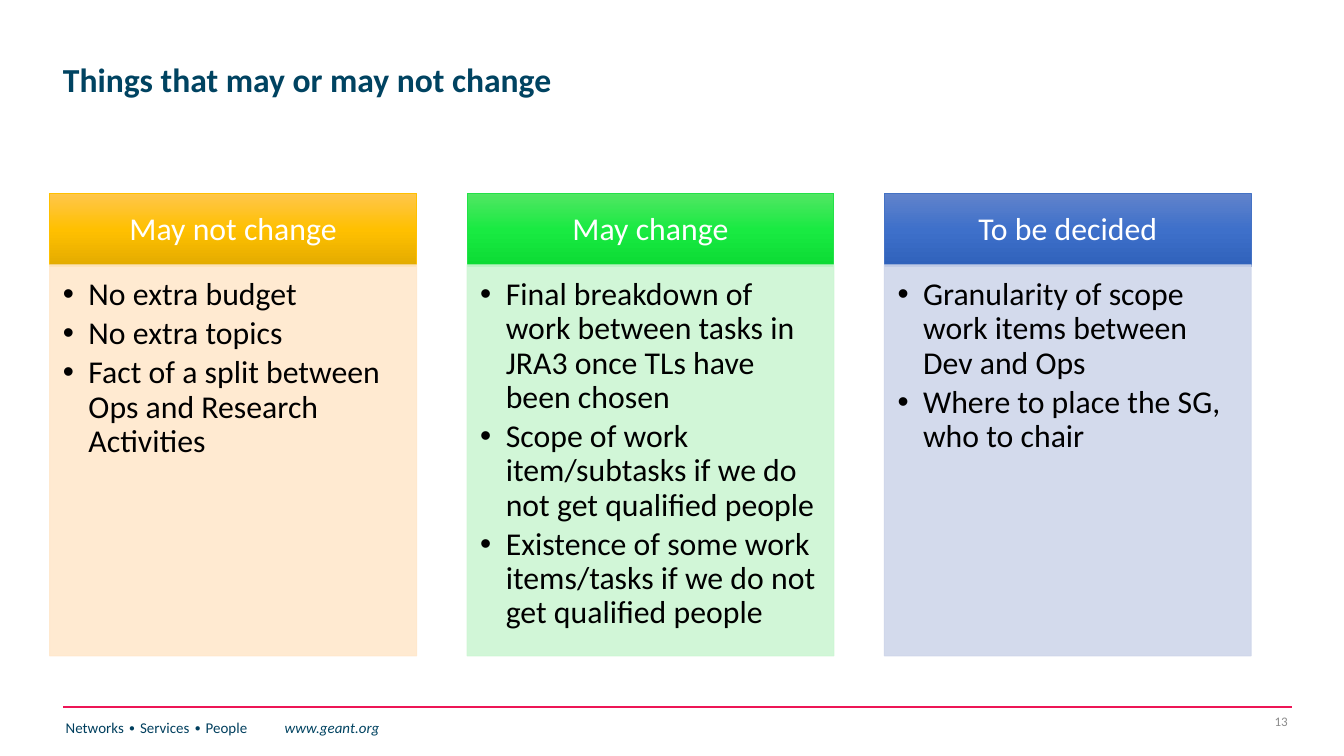
from lxml import etree
from pptx import Presentation
from pptx.dml.color import RGBColor
from pptx.enum.shapes import MSO_CONNECTOR, MSO_SHAPE
from pptx.enum.text import MSO_ANCHOR, PP_ALIGN
from pptx.oxml.ns import qn
from pptx.util import Inches, Pt

RECTANGLE = MSO_SHAPE.RECTANGLE
STRAIGHT = MSO_CONNECTOR.STRAIGHT
TOP, MIDDLE = MSO_ANCHOR.TOP, MSO_ANCHOR.MIDDLE
LEFT, CENTER, RIGHT = PP_ALIGN.LEFT, PP_ALIGN.CENTER, PP_ALIGN.RIGHT

FONT = "Calibri"
WHITE = RGBColor(0xFF, 0xFF, 0xFF)
BLACK = RGBColor(0x00, 0x00, 0x00)
NAVY = RGBColor(0x00, 0x43, 0x61)
FOOTER_NAVY = RGBColor(0x00, 0x3F, 0x5E)
GRAY = RGBColor(0x8C, 0x8C, 0x8C)
CRIMSON = RGBColor(0xED, 0x15, 0x56)
AMBER = RGBColor(0xFF, 0xC0, 0x00)
AMBER_STOPS = (RGBColor(0xFF, 0xC6, 0x4B), AMBER, RGBColor(0xE3, 0xAB, 0x00))
PEACH = RGBColor(0xFF, 0xE8, 0xCC)
GREEN = RGBColor(0x23, 0xE1, 0x48)
GREEN_STOPS = (RGBColor(0x51, 0xE6, 0x63), RGBColor(0x19, 0xEA, 0x42), RGBColor(0x0C, 0xDB, 0x34))
MINT = RGBColor(0xCC, 0xF6, 0xD3)
BLUE = RGBColor(0x44, 0x72, 0xC4)
BLUE_STOPS = (RGBColor(0x61, 0x83, 0xCB), RGBColor(0x3E, 0x70, 0xCA), RGBColor(0x30, 0x62, 0xBB))
LAVENDER = RGBColor(0xCF, 0xD6, 0xEA)

COLUMNS = [
    ("May not change", AMBER, AMBER_STOPS, PEACH, [
        "No extra budget",
        "No extra topics",
        "Fact of a split between Ops and Research Activities",
    ]),
    ("May change", GREEN, GREEN_STOPS, MINT, [
        "Final breakdown of work between tasks in JRA3 once TLs have been chosen",
        "Scope of work item/subtasks if we do not get qualified people",
        "Existence of some work items/tasks if we do not get qualified people",
    ]),
    ("To be decided", BLUE, BLUE_STOPS, LAVENDER, [
        "Granularity of scope work items between Dev and Ops",
        "Where to place the SG, who to chair",
    ]),
]
FIRST_LEFT, LAST_LEFT, COLUMN_WIDTH = 0.37, 6.58, 2.73
COLUMN_STEP = (LAST_LEFT - FIRST_LEFT) / (len(COLUMNS) - 1)
HEADER_TOP, HEADER_HEIGHT = 1.44, 0.54
BODY_TOP, BODY_HEIGHT = 1.97, 2.91


def write(box, lines, size, color, align=LEFT, anchor=TOP, insets=(0.1, 0.05, 0.1, 0.05)):
    """Fill a box with one paragraph per line; insets run left, top, right, bottom."""
    frame = box.text_frame
    frame.word_wrap = True
    frame.vertical_anchor = anchor
    frame.margin_left, frame.margin_top, frame.margin_right, frame.margin_bottom = map(Inches, insets)
    frame.text = "\n".join(lines)
    for para in frame.paragraphs:
        para.alignment = align
        for span in para.runs:
            span.font.name = FONT
            span.font.size = Pt(size)
            span.font.color.rgb = color
    return frame.paragraphs


def add_panel(left, top, height, line_color):
    panel = page.shapes.add_shape(
        RECTANGLE, Inches(left), Inches(top), Inches(COLUMN_WIDTH), Inches(height))
    panel.shadow.inherit = False
    panel.line.color.rgb = line_color
    panel.line.width = Pt(0.5)
    return panel


deck = Presentation()
deck.slide_width = Inches(10)
deck.slide_height = Inches(10) * 9 // 16
page = deck.slides.add_slide(deck.slide_layouts[6])

# Footer
rule = page.shapes.add_connector(STRAIGHT, Inches(0.47), Inches(5.26), Inches(9.61), Inches(5.26))
rule.line.color.rgb = CRIMSON
rule.line.width = Pt(1)
etree.SubElement(rule._element.spPr, qn("a:effectLst"))

footer = page.shapes.add_textbox(Inches(0.39), Inches(5.3), Inches(3.41), Inches(0.37))
footer_para = write(footer, ["Networks ∙ Services ∙ People\t"], 8, FOOTER_NAVY)[0]
tabs = etree.SubElement(footer_para._p.get_or_add_pPr(), qn("a:tabLst"))
etree.SubElement(tabs, qn("a:tab"), pos=str(Inches(1.63)), algn="l")
address = footer_para.add_run()
address.text = "www.geant.org"
address.font.name = FONT
address.font.size = Pt(8)
address.font.italic = True
address.font.color.rgb = NAVY

# Columns
for index, (heading, accent, stops, tint, items) in enumerate(COLUMNS):
    left = FIRST_LEFT + index * COLUMN_STEP

    header = add_panel(left, HEADER_TOP, HEADER_HEIGHT, accent)
    header.fill.gradient()
    header.fill.gradient_angle = 270
    stop_list = header._element.spPr.find(qn("a:gradFill")).find(qn("a:gsLst"))
    for old_stop in list(stop_list):
        stop_list.remove(old_stop)
    for position, color in zip((0, 50000, 100000), stops):
        stop = etree.SubElement(stop_list, qn("a:gs"), pos=str(position))
        etree.SubElement(stop, qn("a:srgbClr"), val=str(color))
    write(header, [heading], 17, WHITE, CENTER, MIDDLE, (0.13, 0.08, 0.13, 0.08))[0].line_spacing = 0.9

    body = add_panel(left, BODY_TOP, BODY_HEIGHT, tint)
    body.fill.solid()
    body.fill.fore_color.rgb = tint
    for color_element in body._element.spPr.iter(qn("a:srgbClr")):
        etree.SubElement(color_element, qn("a:alpha"), val="90000")
    for para in write(body, items, 17, BLACK, insets=(0.1, 0.1, 0.13, 0.15)):
        properties = para._p.get_or_add_pPr()
        properties.set("marL", str(Inches(0.19)))
        properties.set("indent", str(Inches(-0.19)))
        etree.SubElement(properties, qn("a:buFont"), typeface="Arial")
        etree.SubElement(properties, qn("a:buChar"), char="•")
        para.line_spacing = 0.9
        para.space_after = Pt(2.55)

# Page number and title
number = page.shapes.add_textbox(Inches(9.07), Inches(5.25), Inches(0.61), Inches(0.23))
write(number, ["13"], 7, GRAY, RIGHT, MIDDLE)

title = page.shapes.add_textbox(Inches(0.37), Inches(0.06), Inches(7.88), Inches(1.09))
title_para = write(title, ["Things that may or may not change"], 18, NAVY, anchor=MIDDLE)[0]
title_para.line_spacing = 0.9
title_para.runs[0].font.bold = True

deck.save("out.pptx")
